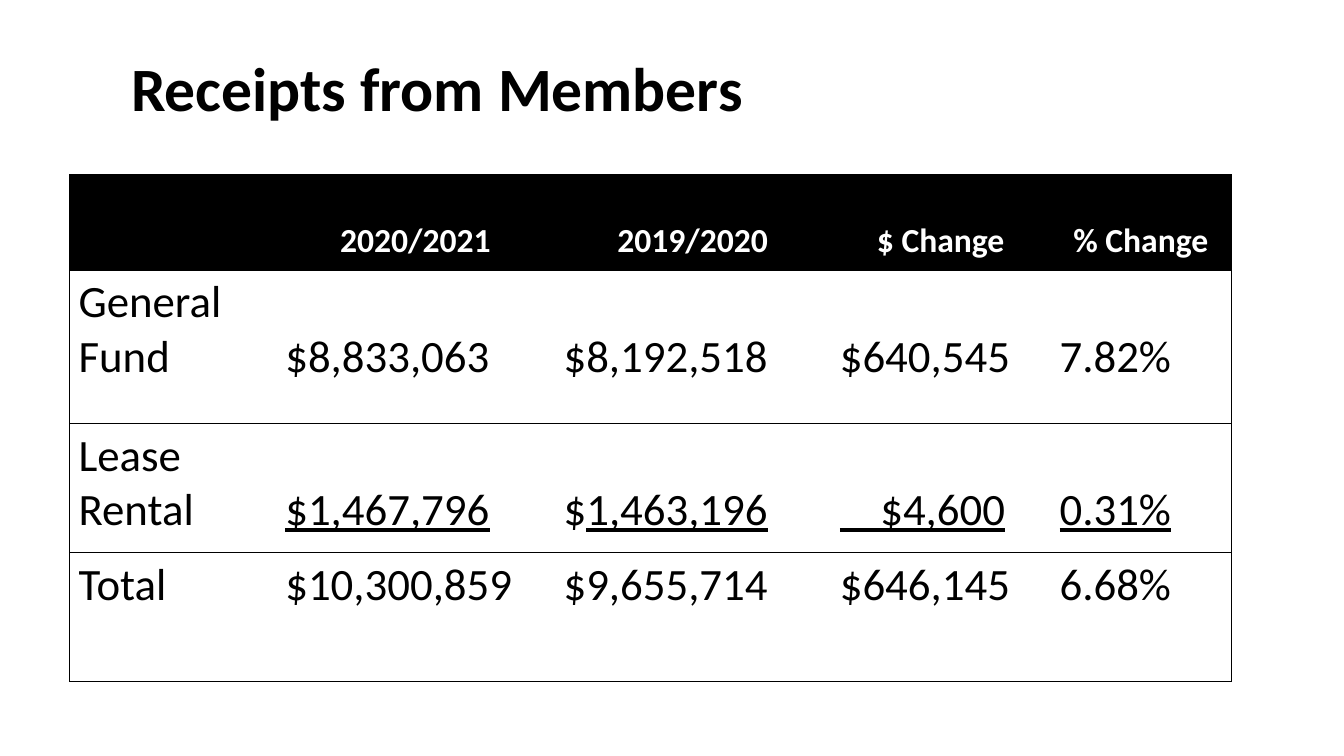
from dataclasses import dataclass

from lxml import etree
from pptx import Presentation
from pptx.dml.color import RGBColor
from pptx.enum.text import MSO_ANCHOR, MSO_AUTO_SIZE, PP_ALIGN
from pptx.oxml.ns import qn
from pptx.util import Emu, Pt

LEFT, CENTER = PP_ALIGN.LEFT, PP_ALIGN.CENTER
TOP, MIDDLE = MSO_ANCHOR.TOP, MSO_ANCHOR.MIDDLE
NO_FIT = MSO_AUTO_SIZE.NONE
TITLE_ONLY = 5
SCALE = 9144
SIDES = ("lnL", "lnR", "lnT", "lnB")


@dataclass(frozen=True)
class Theme:
    font: str = "Calibri"
    black: str = "000000"
    white: str = "FFFFFF"
    title: int = 44
    head: int = 24
    body: int = 32
    line: float = 0.5


@dataclass(frozen=True)
class Run:
    text: str
    under: bool = False


@dataclass(frozen=True)
class Row:
    label: str
    values: tuple[tuple[Run, ...], ...]
    height: int
    drop: int


THEME = Theme()
WIDTHS = (205, 276, 274, 218, 179)
HEAD = ("", "2020/2021", "2019/2020", "$ Change", "% Change")
HEAD_HEIGHT, HEAD_DROP = 95, 46
ROWS = (
    Row("General Fund",
        ((Run("$8,833,063"),), (Run("$8,192,518"),), (Run("$640,545"),), (Run("7.82%"),)),
        152, 59),
    Row("Lease Rental",
        ((Run("$1,467,796", True),), (Run("$"), Run("1,463,196", True)),
         (Run("    $4,600", True),), (Run("0.31%", True),)),
        128, 59),
    Row("Total",
        ((Run("$10,300,859"),), (Run("$9,655,714"),), (Run("$646,145"),), (Run("6.68%"),)),
        128, 5),
)


def px(count: int) -> Emu:
    return Emu(count * SCALE)


def rgb(color: str) -> RGBColor:
    return RGBColor.from_string(color)


def write(frame, runs: tuple[Run, ...], *, size: int, color: str = THEME.black,
          bold: bool = False, align=LEFT, spacing: float = 1.0) -> None:
    para = frame.paragraphs[0]
    para.alignment = align
    para.line_spacing = spacing
    for item in runs:
        run = para.add_run()
        run.text = item.text
        font = run.font
        font.name, font.size, font.bold = THEME.font, Pt(size), bold
        font.underline = item.under
        font.color.rgb = rgb(color)


def rule(cell, shown: set[str]) -> None:
    props = cell._tc.get_or_add_tcPr()
    for index, side in enumerate(SIDES):
        line = etree.Element(qn(f"a:{side}"), w=str(int(Pt(THEME.line))))
        if side in shown:
            fill = etree.SubElement(line, qn("a:solidFill"))
            etree.SubElement(fill, qn("a:srgbClr"), val=THEME.black)
        else:
            etree.SubElement(line, qn("a:noFill"))
        props.insert(index, line)


def dress(cell, col: int, fill: str, drop: int) -> None:
    cell.fill.solid()
    cell.fill.fore_color.rgb = rgb(fill)
    cell.vertical_anchor = TOP
    cell.margin_left = cell.margin_right = px(9)
    cell.margin_top, cell.margin_bottom = px(drop), px(5)
    shown = {"lnT", "lnB"}
    if col == 0:
        shown.add("lnL")
    if col == len(WIDTHS) - 1:
        shown.add("lnR")
    rule(cell, shown)


def add_title(slide) -> None:
    title = slide.shapes.title
    title.left, title.top, title.width, title.height = map(px, (120, 31, 1100, 120))
    frame = title.text_frame
    frame.auto_size = NO_FIT
    frame.vertical_anchor = MIDDLE
    write(frame, (Run("Receipts from Members"),), size=THEME.title, bold=True, spacing=0.9)


def add_grid(slide) -> None:
    heights = (HEAD_HEIGHT, *(row.height for row in ROWS))
    table = slide.shapes.add_table(
        len(heights), len(WIDTHS), px(69), px(173), px(sum(WIDTHS)), px(sum(heights))).table
    table.horz_banding = False
    for column, width in zip(table.columns, WIDTHS):
        column.width = px(width)
    for line, height in zip(table.rows, heights):
        line.height = px(height)

    for col, text in enumerate(HEAD):
        cell = table.cell(0, col)
        dress(cell, col, THEME.black, HEAD_DROP)
        if text:
            write(cell.text_frame, (Run(text),), size=THEME.head, color=THEME.white,
                  bold=True, align=CENTER)

    for index, row in enumerate(ROWS, 1):
        for col, runs in enumerate(((Run(row.label),), *row.values)):
            cell = table.cell(index, col)
            dress(cell, col, THEME.white, row.drop if col else 5)
            write(cell.text_frame, runs, size=THEME.body)


def main() -> None:
    deck = Presentation()
    deck.slide_width, deck.slide_height = px(1333), px(750)
    slide = deck.slides.add_slide(deck.slide_layouts[TITLE_ONLY])
    add_title(slide)
    add_grid(slide)
    deck.save("out.pptx")


if __name__ == "__main__":
    main()
